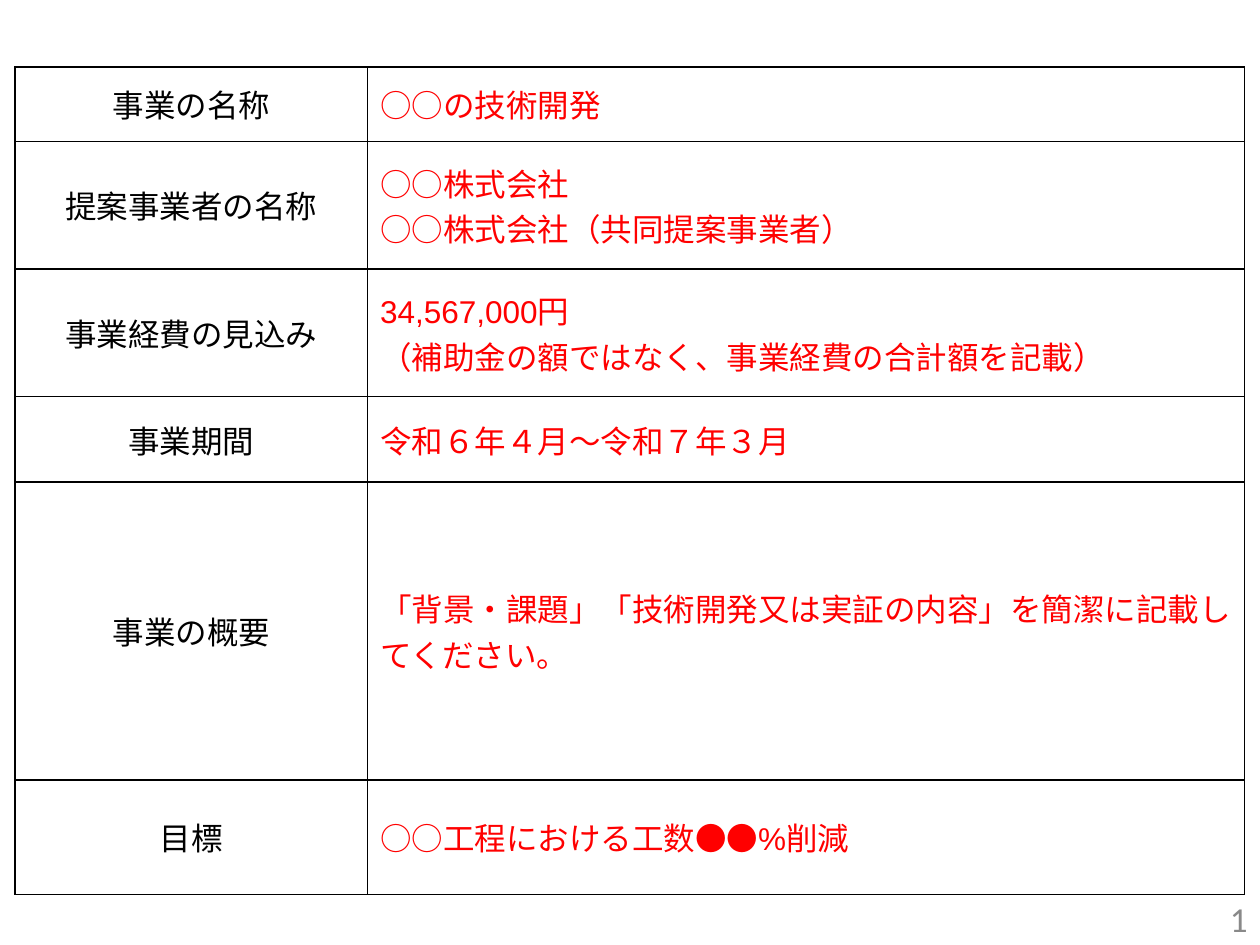
from lxml.etree import SubElement
from pptx import Presentation
from pptx.dml.color import RGBColor
from pptx.enum.text import MSO_ANCHOR, PP_ALIGN
from pptx.oxml.ns import qn
from pptx.util import Cm, Pt

COLORS = {"label": "000000", "entry": "FF0000", "border": "000000",
          "cell": "FFFFFF", "number": "898989"}


def write(frame, text, size=18, font="Arial", color="label", align=PP_ALIGN.LEFT):
    frame.text = text
    frame.word_wrap = True
    for paragraph in frame.paragraphs:
        paragraph.alignment = align
        for run in paragraph.runs:
            run.font.size = Pt(size)
            run.font.name = font
            run.font.bold = False
            run.font.color.rgb = RGBColor.from_string(COLORS[color])


def add_borders(cell):
    properties = cell._tc.get_or_add_tcPr()
    for side in ("a:lnL", "a:lnR", "a:lnT", "a:lnB"):
        line = SubElement(properties, qn(side), w=str(Pt(1)))
        fill = SubElement(line, qn("a:solidFill"))
        SubElement(fill, qn("a:srgbClr"), val=COLORS["border"])


project_items = [
    ("事業の名称", "○○の技術開発", 1.5),
    ("提案事業者の名称", "○○株式会社\n○○株式会社（共同提案事業者）", 2.57),
    ("事業経費の見込み", "34,567,000円\n（補助金の額ではなく、事業経費の合計額を記載）", 2.57),
    ("事業期間", "令和６年４月～令和７年３月", 1.73),
    ("事業の概要", "「背景・課題」「技術開発又は実証の内容」を簡潔に記載してください。", 6),
    ("目標", "○○工程における工数●●%削減", 2.31),
]
column_widths = [7.11, 17.68]

prs = Presentation()
prs.slide_width = Cm(25.4)
prs.slide_height = Cm(19.05)
slide = prs.slides.add_slide(prs.slide_layouts[6])

overview = slide.shapes.add_table(
    len(project_items), len(column_widths), Cm(0.3), Cm(1.35),
    Cm(sum(column_widths)), Cm(sum(height for _, _, height in project_items))).table
overview.first_row = False
overview.horz_banding = False
for column, width in zip(overview.columns, column_widths):
    column.width = Cm(width)

for row, (label, entry, height) in zip(overview.rows, project_items):
    row.height = Cm(height)
    label_cell, entry_cell = row.cells
    write(label_cell.text_frame, label, align=PP_ALIGN.CENTER)
    write(entry_cell.text_frame, entry, color="entry")
    for cell in row.cells:
        cell.vertical_anchor = MSO_ANCHOR.MIDDLE
        add_borders(cell)
    label_cell.fill.background()
    entry_cell.fill.solid()
    entry_cell.fill.fore_color.rgb = RGBColor.from_string(COLORS["cell"])

page_number = slide.shapes.add_textbox(Cm(19.48), Cm(18), Cm(5.92), Cm(1.02)).text_frame
page_number.vertical_anchor = MSO_ANCHOR.MIDDLE
write(page_number, "1", size=20, font="Calibri", color="number", align=PP_ALIGN.RIGHT)

prs.save("out.pptx")
